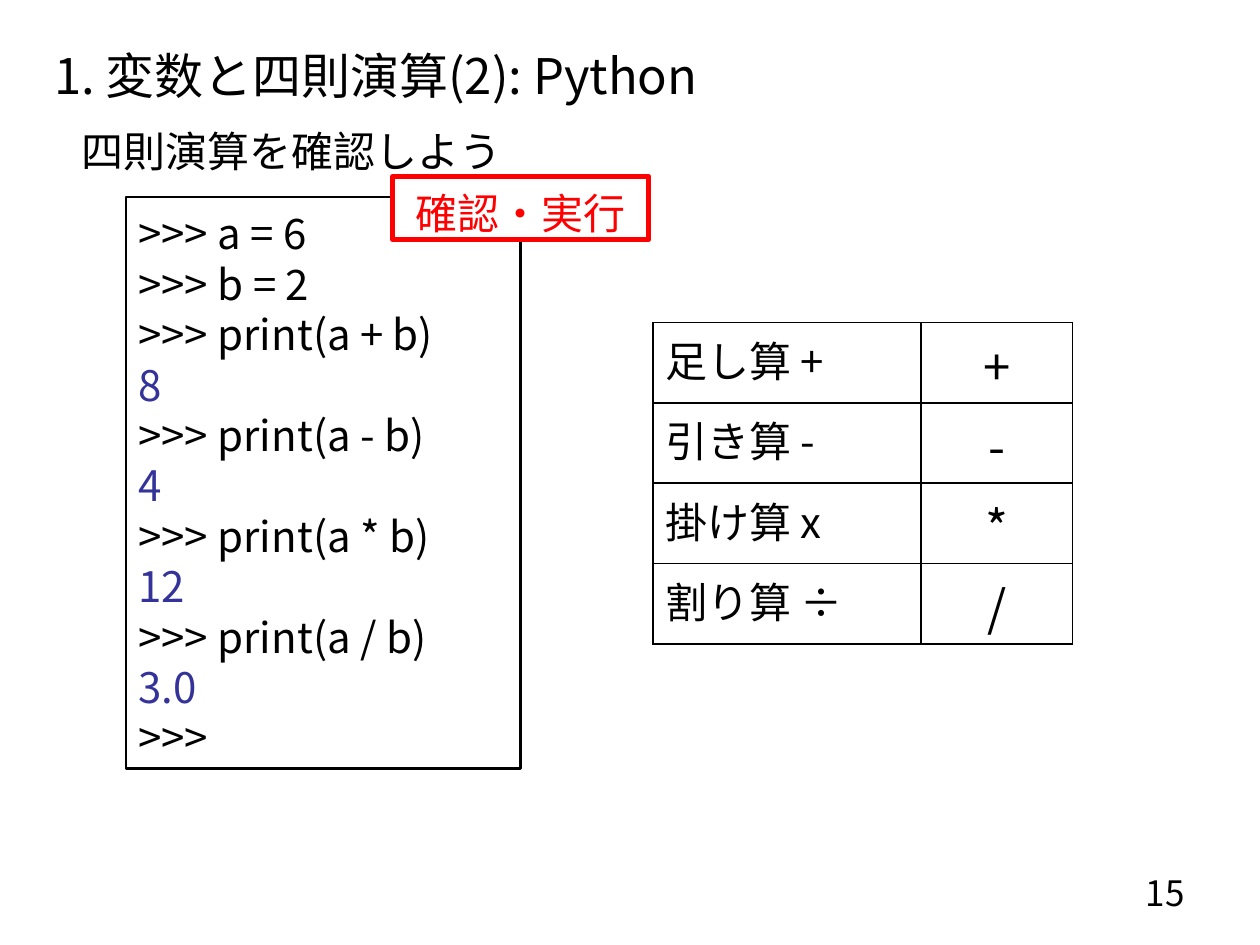
from dataclasses import dataclass

from lxml.etree import SubElement
from pptx import Presentation
from pptx.dml.color import RGBColor
from pptx.enum.shapes import MSO_SHAPE
from pptx.enum.text import MSO_ANCHOR, MSO_AUTO_SIZE, PP_ALIGN
from pptx.oxml.ns import qn
from pptx.util import Cm, Pt


@dataclass(frozen=True)
class Theme:
    font: str = "Noto Sans CJK JP"
    alt: str = "Arial"
    ink: str = "000000"
    out: str = "333399"
    mark: str = "FF0000"
    paper: str = "FFFFFF"
    head: int = 28
    body: int = 24
    small: int = 20
    lead: float = 1.2


T = Theme()


def write(frame, text, size=T.body, color=T.ink, font=T.font,
          align=PP_ALIGN.LEFT, lead=T.lead, out=()):
    """Fill a text frame, one paragraph per line; lines in out are program output."""
    frame.word_wrap = True
    frame.vertical_anchor = MSO_ANCHOR.TOP
    for i, line in enumerate(text.split("\n")):
        para = frame.add_paragraph() if i else frame.paragraphs[0]
        para.alignment = align
        para.space_before = Pt(0)
        if lead:
            para.line_spacing = Pt(size * lead)
        run = para.add_run()
        run.text = line
        run.font.size = Pt(size)
        run.font.name = font
        run.font.color.rgb = RGBColor.from_string(T.out if line in out else color)
        SubElement(run.font._element, qn("a:ea"), typeface=font)


def place(shape, text, **form):
    """Write text into a shape with the common insets."""
    frame = shape.text_frame
    frame.auto_size = MSO_AUTO_SIZE.NONE
    frame.margin_left = frame.margin_right = Cm(0.25)
    frame.margin_top, frame.margin_bottom = Cm(0.22), Cm(0)
    write(frame, text, **form)


deck = Presentation()
deck.slide_width, deck.slide_height = Cm(25.4), Cm(19.05)
slide = deck.slides.add_slide(deck.slide_layouts[5])
shapes = slide.shapes

# Headings and page number
title = shapes.title
title.left, title.top, title.width, title.height = Cm(0.84), Cm(0.69), Cm(22.58), Cm(1.45)
place(title, "1. 変数と四則演算(2): Python", size=T.head)

lead = shapes.add_textbox(Cm(1.4), Cm(2.31), Cm(19.48), Cm(1.27))
place(lead, "四則演算を確認しよう")

page = shapes.add_textbox(Cm(18.21), Cm(17.35), Cm(5.92), Cm(1.32))
place(page, "15", size=T.small, align=PP_ALIGN.RIGHT)

# Python session
code = shapes.add_shape(MSO_SHAPE.RECTANGLE, Cm(2.54), Cm(3.97), Cm(7.95), Cm(11.53))
code.shadow.inherit = False
code.fill.background()
code.line.color.rgb = RGBColor.from_string(T.ink)
code.line.width = Pt(1.5)
place(code, """>>> a = 6
>>> b = 2
>>> print(a + b)
8
>>> print(a - b)
4
>>> print(a * b)
12
>>> print(a / b)
3.0
>>>""", out=("8", "4", "12", "3.0"))

# Operator table
rows = [("足し算 +", "+"), ("引き算 -", "-"), ("掛け算 x", "*"), ("割り算 ÷", "/")]
cols = [
    (Cm(5.41), dict(size=T.body)),
    (Cm(3.05), dict(size=T.head, align=PP_ALIGN.CENTER)),
]
high = Cm(1.62)
grid = shapes.add_table(len(rows), len(cols), Cm(13.16), Cm(6.5),
                        sum(wide for wide, _ in cols), high * len(rows)).table
grid.first_row = grid.horz_banding = False
for c, (wide, form) in enumerate(cols):
    grid.columns[c].width = wide
    for r, row in enumerate(rows):
        grid.rows[r].height = high
        cell = grid.cell(r, c)
        cell.margin_bottom = Cm(0)
        write(cell.text_frame, row[c], lead=None, **form)
        props = cell._tc.get_or_add_tcPr()
        for side in ("lnL", "lnR", "lnT", "lnB"):
            edge = SubElement(props, qn(f"a:{side}"), w=str(Pt(1)))
            SubElement(SubElement(edge, qn("a:solidFill")), qn("a:srgbClr"), val=T.ink)
        cell.fill.background()

# Badge over the session
badge = shapes.add_shape(MSO_SHAPE.RECTANGLE, Cm(7.92), Cm(3.56), Cm(5.16), Cm(1.27))
badge.shadow.inherit = False
badge.fill.solid()
badge.fill.fore_color.rgb = RGBColor.from_string(T.paper)
badge.line.color.rgb = RGBColor.from_string(T.mark)
badge.line.width = Pt(3)
place(badge, "確認・実行", color=T.mark, font=T.alt, align=PP_ALIGN.CENTER)

deck.save("out.pptx")
